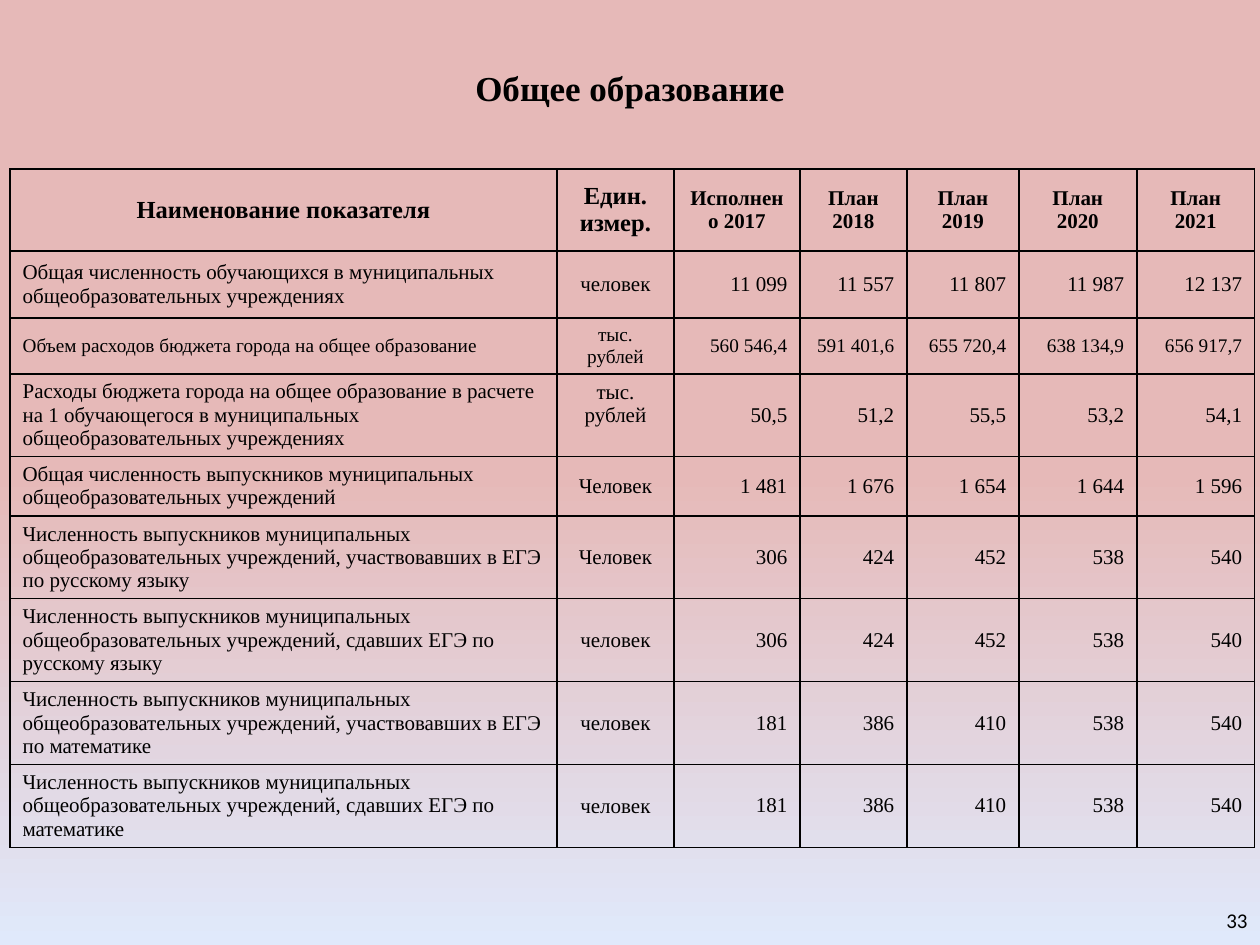
import typing

import pptx
import pptx.dml.color
import pptx.enum.text
import pptx.oxml
import pptx.oxml.ns
import pptx.util

PX = 914400 // 126
BLACK = pptx.dml.color.RGBColor(0x00, 0x00, 0x00)
ROSE = pptx.dml.color.RGBColor(0xE6, 0xB9, 0xB8)
PALE_BLUE = pptx.dml.color.RGBColor(0xE0, 0xE9, 0xFB)
SERIF = "Times New Roman"
ALIGN = pptx.enum.text.PP_ALIGN
MIDDLE = pptx.enum.text.MSO_ANCHOR.MIDDLE

COLUMN_WIDTHS = (547, 117, 126, 107, 112, 118, 118)
HEADER_HEIGHT = 82
HEADER = ("Наименование показателя", "Един. измер.", "Исполнено 2017",
          "План 2018", "План 2019", "План 2020", "План 2021")
HEADER_SIZES = (14, 14, 12, 12, 12, 12, 12)


class Indicator(typing.NamedTuple):
    name: str
    unit: str
    values: tuple[str, ...]
    height: int
    size: int = 12
    unit_bottom: int = 6


SCHOOLS = "муниципальных общеобразовательных учреждений"
EXAM_2017_RUSSIAN = ("306", "424", "452", "538", "540")
EXAM_2017_MATHS = ("181", "386", "410", "538", "540")
INDICATORS = (
    Indicator("Общая численность обучающихся в муниципальных общеобразовательных учреждениях",
              "человек", ("11 099", "11 557", "11 807", "11 987", "12 137"), 67),
    Indicator("Объем расходов бюджета города на общее образование", "тыс. рублей",
              ("560 546,4", "591 401,6", "655 720,4", "638 134,9", "656 917,7"), 56, size=11),
    Indicator("Расходы бюджета города на общее образование в расчете на 1 обучающегося "
              "в муниципальных общеобразовательных учреждениях",
              "тыс. рублей", ("50,5", "51,2", "55,5", "53,2", "54,1"), 82, unit_bottom=29),
    Indicator(f"Общая численность выпускников {SCHOOLS}",
              "Человек", ("1 481", "1 676", "1 654", "1 644", "1 596"), 59),
    Indicator(f"Численность выпускников {SCHOOLS}, участвовавших в ЕГЭ по русскому языку",
              "Человек", EXAM_2017_RUSSIAN, 83),
    Indicator(f"Численность выпускников {SCHOOLS}, сдавших ЕГЭ по русскому языку",
              "человек", EXAM_2017_RUSSIAN, 83),
    Indicator(f"Численность выпускников {SCHOOLS}, участвовавших в ЕГЭ по математике",
              "человек", EXAM_2017_MATHS, 82),
    Indicator(f"Численность выпускников {SCHOOLS}, сдавших ЕГЭ по математике",
              "человек", EXAM_2017_MATHS, 83),
)


def px(n: int) -> pptx.util.Emu:
    return pptx.util.Emu(n * PX)


def write(tf, text: str, size: int, align, bold: bool = False, font: str = SERIF) -> None:
    tf.word_wrap = True
    p = tf.paragraphs[0]
    p.alignment = align
    r = p.add_run()
    r.text = text
    r.font.size = pptx.util.Pt(size)
    r.font.name = font
    r.font.bold = bold
    r.font.color.rgb = BLACK


def style_cell(cell) -> None:
    """Give the cell a thin black border on every side and no fill."""
    tc_pr = cell._tc.get_or_add_tcPr()
    for side in "LRTB":
        tc_pr.append(pptx.oxml.parse_xml(
            f'<a:ln{side} {pptx.oxml.ns.nsdecls("a")} w="{pptx.util.Pt(1)}">'
            f'<a:solidFill><a:srgbClr val="{BLACK}"/></a:solidFill></a:ln{side}>'))
    cell.fill.background()
    cell.vertical_anchor = MIDDLE


def set_background(s) -> None:
    fill = s.background.fill
    fill.gradient()
    fill.gradient_angle = 270
    for stop, position, color in zip(fill.gradient_stops, (0.5, 1), (ROSE, PALE_BLUE)):
        stop.position = position
        stop.color.rgb = color


def add_title(s) -> None:
    sp = s.shapes.title
    sp.left, sp.top, sp.width, sp.height = px(0), px(60), px(1260), px(55)
    sp.text_frame.vertical_anchor = MIDDLE
    write(sp.text_frame, "Общее образование", 20, ALIGN.CENTER, bold=True)


def add_indicator_table(s) -> None:
    heights = [HEADER_HEIGHT] + [row.height for row in INDICATORS]
    table = s.shapes.add_table(len(heights), len(COLUMN_WIDTHS), px(10), px(169),
                               px(sum(COLUMN_WIDTHS)), px(sum(heights))).table
    table.first_row = table.horz_banding = False
    for column, width in zip(table.columns, COLUMN_WIDTHS):
        column.width = px(width)
    for row, height in zip(table.rows, heights):
        row.height = px(height)
    for cell in table.iter_cells():
        style_cell(cell)

    for i, (text, size) in enumerate(zip(HEADER, HEADER_SIZES)):
        write(table.cell(0, i).text_frame, text, size, ALIGN.CENTER, bold=True)
    aligns = [ALIGN.LEFT, ALIGN.CENTER] + [ALIGN.RIGHT] * 5
    for i, item in enumerate(INDICATORS, start=1):
        for j, (text, align) in enumerate(zip((item.name, item.unit, *item.values), aligns)):
            write(table.cell(i, j).text_frame, text, item.size, align)
        table.cell(i, 1).margin_bottom = px(item.unit_bottom)


def add_page_number(s) -> None:
    tf = s.shapes.add_textbox(px(1008), px(895), px(252), px(50)).text_frame
    tf.vertical_anchor = MIDDLE
    write(tf, "33", 12, ALIGN.RIGHT, font="Calibri")


def main() -> None:
    prs = pptx.Presentation()
    prs.slide_width, prs.slide_height = px(1260), px(945)
    s = prs.slides.add_slide(prs.slide_layouts.get_by_name("Title Only"))
    set_background(s)
    add_title(s)
    add_indicator_table(s)
    add_page_number(s)
    prs.save("out.pptx")


if __name__ == "__main__":
    main()
